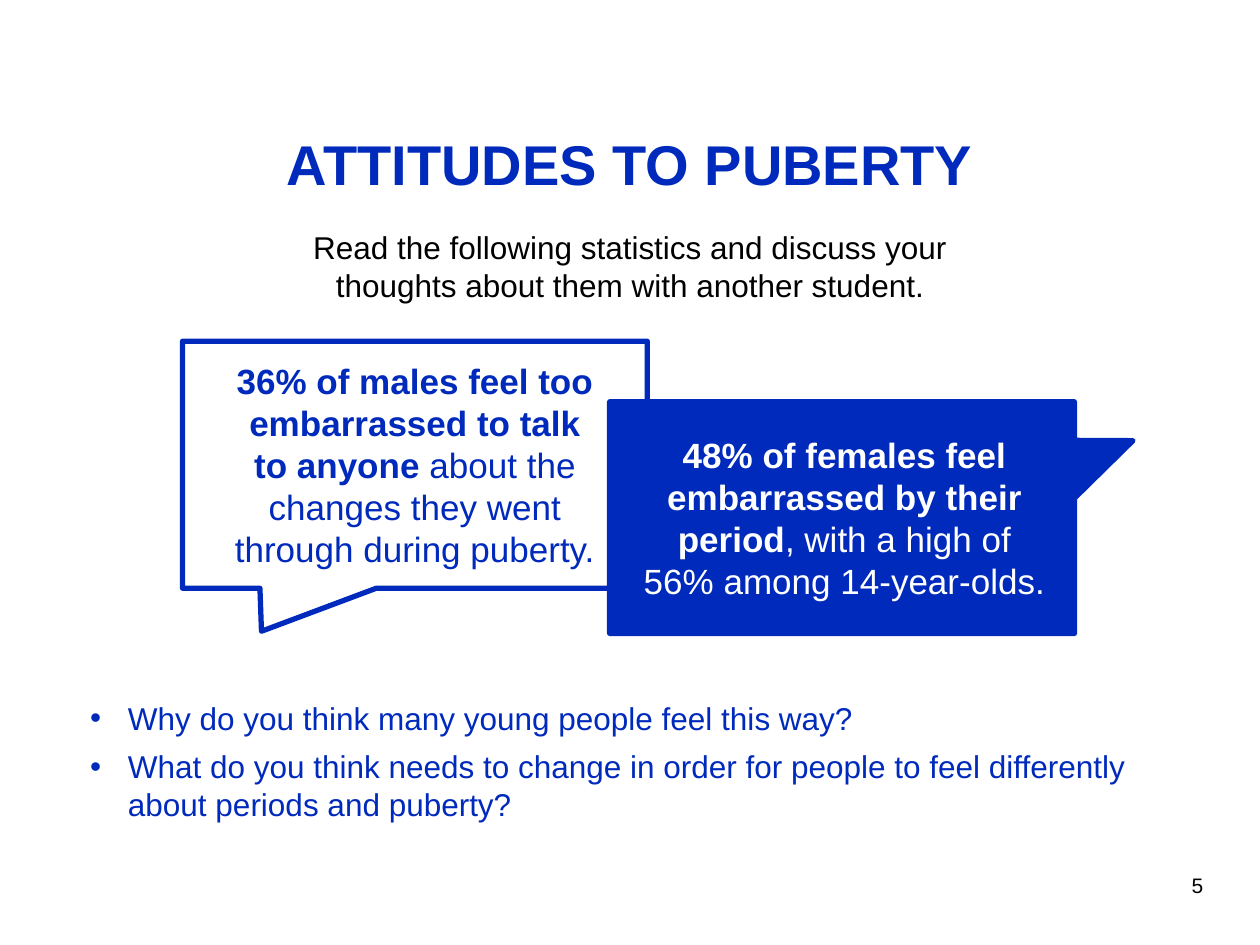
import pptx
import pptx.util
from lxml import etree
from pptx.dml.color import RGBColor
from pptx.enum.shapes import MSO_SHAPE
from pptx.enum.text import MSO_ANCHOR, PP_ALIGN
from pptx.oxml.ns import qn
from pptx.util import Cm, Pt

BLUE = RGBColor(0x00, 0x2A, 0xBB)
WHITE = RGBColor(0xFF, 0xFF, 0xFF)
BLACK = RGBColor(0x00, 0x00, 0x00)
FONT = "Arial"

TITLE = "ATTITUDES TO PUBERTY"
INTRO = ("Read the following statistics and discuss your\v"
         "thoughts about them with another student.")
PAGE_NUMBER = "5"
# Boxes are left, top, width, height in cm; margins are left, top, right, bottom
STATISTICS = [
    {"bold": "36% of males feel too embarrassed to talk to anyone",
     "plain": " about the changes they went through during puberty.",
     "box": (3.68, 6.88, 9.37, 4.98), "margins": (1, 0.3, 1, 0.3),
     "pointer": (-0.33, 0.674), "fill": WHITE, "ink": BLUE},
    {"bold": "48% of females feel embarrassed by their period",
     "plain": ", with a high of 56% among 14-year-olds. ",
     "box": (12.29, 8.1, 9.37, 4.67), "margins": (0.6, 0.3, 0.5, 0.3),
     "pointer": (0.626, -0.332), "fill": BLUE, "ink": WHITE},
]
QUESTIONS = [
    "Why do you think many young people feel this way?",
    "What do you think needs to change in order for people to feel "
    "differently about periods and puberty?",
]


def style(font, size, color, bold=False):
    font.name, font.size, font.bold = FONT, Pt(size), bold
    font.color.rgb = color


def set_frame(frame, margins, anchor):
    frame.word_wrap = True
    frame.vertical_anchor = anchor
    (frame.margin_left, frame.margin_top,
     frame.margin_right, frame.margin_bottom) = map(Cm, margins)


def add_text(slide, box, text, size, margins, anchor):
    frame = slide.shapes.add_textbox(*map(Cm, box)).text_frame
    set_frame(frame, margins, anchor)
    paragraph = frame.paragraphs[0]
    paragraph.text = text
    paragraph.alignment = PP_ALIGN.CENTER
    style(paragraph.font, size, BLACK)
    for run in paragraph.runs:
        style(run.font, size, BLACK)


def add_statistic(slide, statistic):
    callout = slide.shapes.add_shape(
        MSO_SHAPE.RECTANGULAR_CALLOUT, *map(Cm, statistic["box"]))
    callout.adjustments[0], callout.adjustments[1] = statistic["pointer"]
    callout.shadow.inherit = False
    callout.fill.solid()
    callout.fill.fore_color.rgb = statistic["fill"]
    callout.line.color.rgb = BLUE
    callout.line.width = Pt(3)
    set_frame(callout.text_frame, statistic["margins"], MSO_ANCHOR.MIDDLE)
    paragraph = callout.text_frame.paragraphs[0]
    paragraph.alignment = PP_ALIGN.CENTER
    for part in ("bold", "plain"):
        run = paragraph.add_run()
        run.text = statistic[part]
        style(run.font, 20, statistic["ink"], part == "bold")


def add_questions(slide):
    frame = slide.shapes.add_textbox(
        Cm(1.57), Cm(13.97), Cm(22.56), Cm(2.77)).text_frame
    frame.word_wrap = True
    for index, question in enumerate(QUESTIONS):
        paragraph = frame.add_paragraph() if index else frame.paragraphs[0]
        paragraph.text = question
        paragraph.space_after = Pt(6)
        properties = paragraph._p.get_or_add_pPr()
        properties.set("marL", str(Cm(0.76)))
        properties.set("indent", str(-Cm(0.76)))
        etree.SubElement(properties, qn("a:buFont"), typeface=FONT)
        etree.SubElement(properties, qn("a:buChar"), char="•")
        style(paragraph.runs[0].font, 18, BLUE)


def main():
    deck = pptx.Presentation()
    deck.slide_width, deck.slide_height = Cm(25.4), Cm(19.05)
    slide = deck.slides.add_slide(deck.slide_layouts[5])

    title = slide.shapes.title
    title.left, title.top, title.width, title.height = map(
        Cm, (1.27, 2.31, 22.86, 1.96))
    title.text_frame.text = TITLE
    set_frame(title.text_frame, (0.13,) * 4, MSO_ANCHOR.MIDDLE)
    heading = title.text_frame.paragraphs[0]
    heading.alignment = PP_ALIGN.CENTER
    style(heading.runs[0].font, 32, BLUE, True)

    add_text(slide, (1.27, 4.47, 22.86, 2.41), INTRO, 18,
             (0.13,) * 4, MSO_ANCHOR.TOP)
    add_text(slide, (22.91, 17.15, 2.46, 1.4), PAGE_NUMBER, 12,
             (0.25, 0.13, 0.25, 0.13), MSO_ANCHOR.MIDDLE)
    for statistic in STATISTICS:
        add_statistic(slide, statistic)
    add_questions(slide)
    deck.save("out.pptx")


if __name__ == "__main__":
    main()
